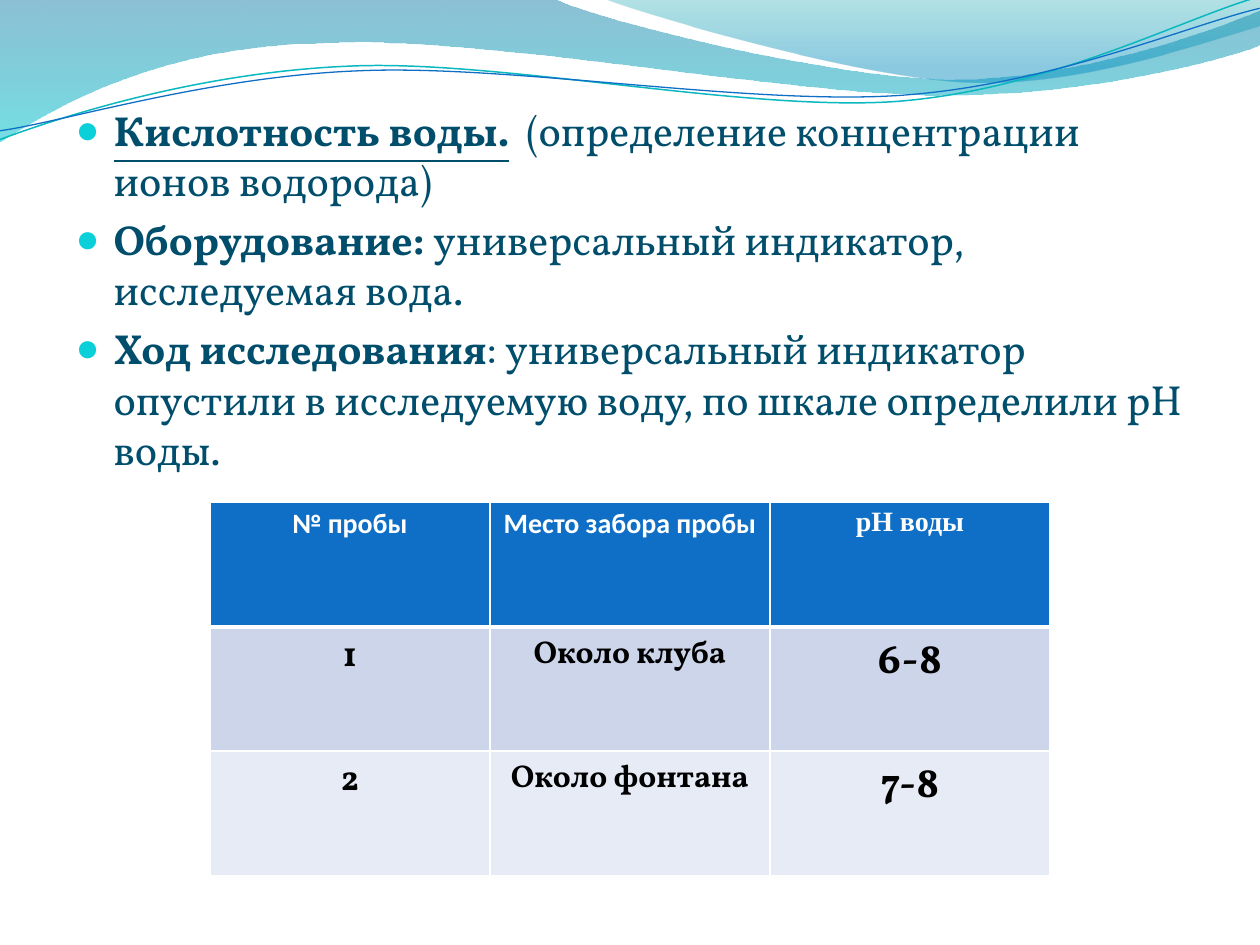
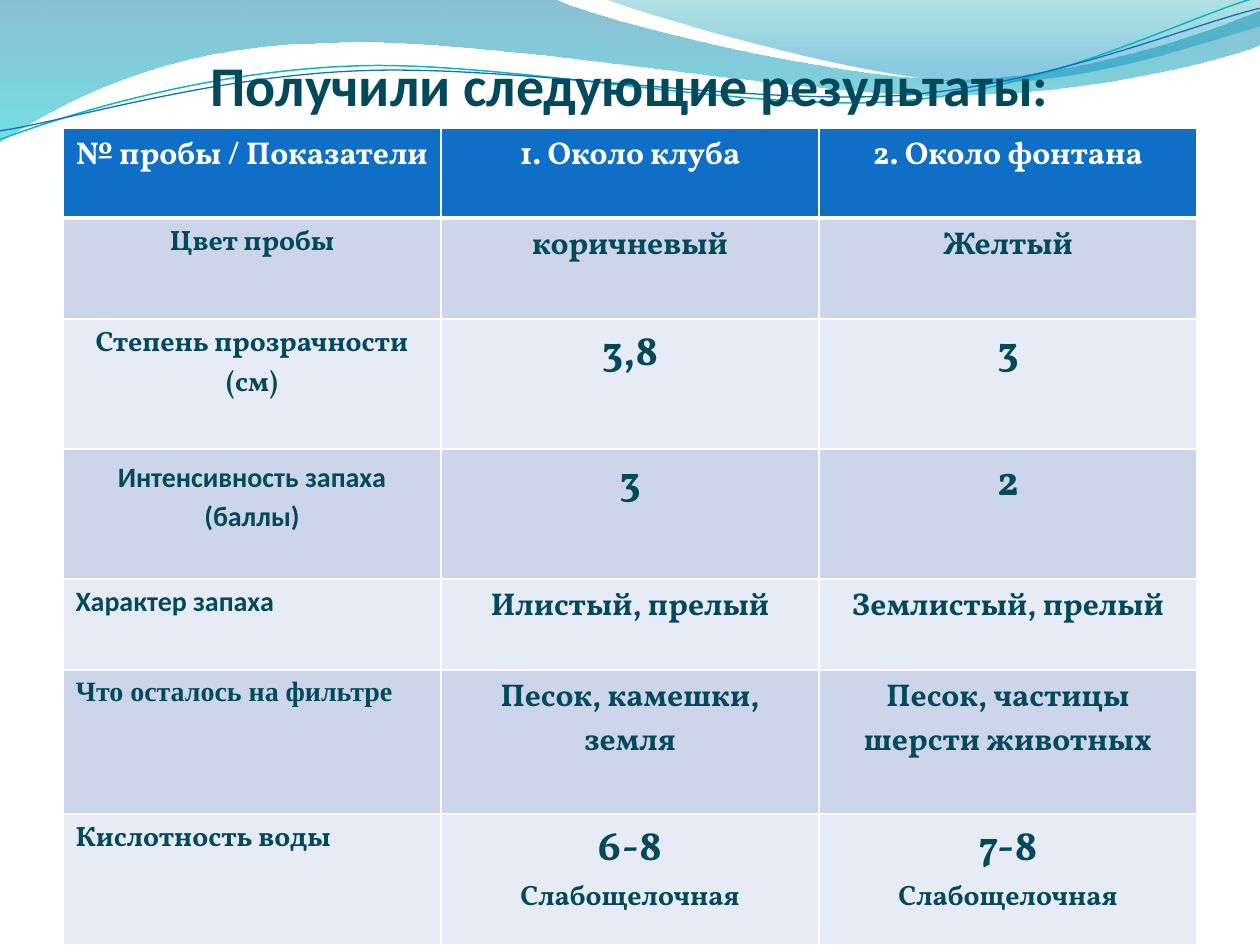
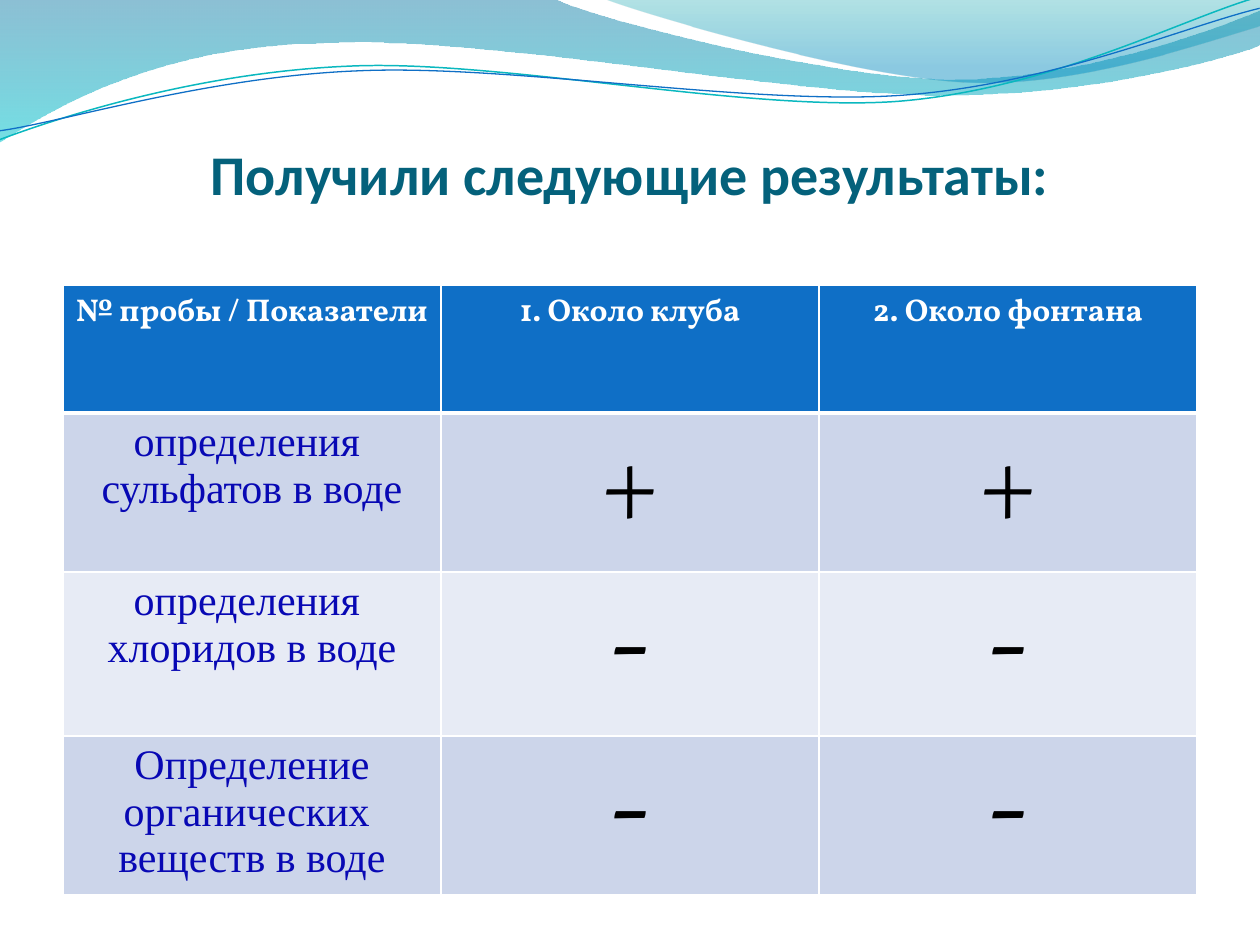
"""Builds three slides on the water tests: acidity method and two result tables."""
from collections import namedtuple
from math import cos, radians, sin

from pptx import Presentation
from pptx.dml.color import RGBColor
from pptx.enum.text import MSO_ANCHOR, MSO_AUTO_SIZE, PP_ALIGN
from pptx.oxml.ns import qn
from pptx.util import Pt
from lxml.etree import SubElement

PX = 914400 / 126
WHITE = RGBColor(0xFF, 0xFF, 0xFF)
BLACK = RGBColor(0x00, 0x00, 0x00)
BLUE = RGBColor(0x0F, 0x6F, 0xC6)
BAND_DARK = RGBColor(0xCC, 0xD5, 0xEA)
BAND_LIGHT = RGBColor(0xE7, 0xEB, 0xF5)
BODY_INK = RGBColor(0x00, 0x4E, 0x6C)
DEEP_TEAL = RGBColor(0x03, 0x49, 0x5C)
TEAL = RGBColor(0x04, 0x61, 0x7B)
NAVY = RGBColor(0x08, 0x08, 0xB4)
WAVE_BLUE = RGBColor(0x00, 0x74, 0xA1)
WAVE_CYAN = RGBColor(0x00, 0xC6, 0xCF)
CREST_GREEN = RGBColor(0x00, 0xA1, 0xA9)
CREST_BLUE = RGBColor(0x00, 0x8B, 0xBF)
STREAM_CYAN = RGBColor(0x0A, 0xB8, 0xBF)
BULLET = RGBColor(0x0B, 0xD0, 0xD9)
HEAD_BORDERS = {"lnL": 1, "lnR": 1, "lnT": 1, "lnB": 3}
STREAM_TURN = 357.3

SERIF, SANS, TIMES = "Vollkorn", "Calibri", "Times New Roman"
CENTER, LEFT = PP_ALIGN.CENTER, PP_ALIGN.LEFT

Style = namedtuple("Style", "size font color bold align spacing",
                   defaults=(True, CENTER, None))
HEAD = Style(18, SERIF, WHITE)
HEAD_SANS = Style(16, SANS, WHITE, spacing=1.15)
HEAD_TIMES = HEAD_SANS._replace(font=TIMES)
SAMPLE = Style(20, SERIF, BLACK)
PLACE = SAMPLE._replace(size=18)
ACIDITY = SAMPLE._replace(size=24)
WORD = Style(18, SERIF, DEEP_TEAL)
VALUE = WORD._replace(size=24)
LABEL = WORD._replace(size=16)
LABEL_SANS = LABEL._replace(font=SANS, spacing=1.15)
LABEL_LEFT = LABEL._replace(align=LEFT)
TEST = Style(24, TIMES, NAVY, False)
SIGN = Style(60, SERIF, BLACK, False)

METHOD = [
    [("Кислотность воды.", True, True),
     ("  (определение концентрации ионов водорода)", False, False)],
    [("Оборудование:", True, False),
     (" универсальный индикатор, исследуемая вода.", False, False)],
    [("Ход исследования", True, False),
     (": универсальный индикатор опустили в исследуемую воду, "
      "по шкале определили рН воды.", False, False)],
]
ACIDITY_ROWS = [
    [[("№ пробы", HEAD_SANS)], [("Место забора пробы", HEAD_SANS)], [("рН воды", HEAD_TIMES)]],
    [[("1", SAMPLE)], [("Около клуба", PLACE)], [("6-8", ACIDITY)]],
    [[("2", SAMPLE)], [("Около фонтана", PLACE)], [("7-8", ACIDITY)]],
]
RESULTS_TITLE = "Получили следующие результаты:"
RESULTS_HEAD = [[("№ пробы / Показатели", HEAD)], [("1. Около клуба", HEAD)],
                [("2. Около фонтана", HEAD)]]
PROPERTY_ROWS = [
    RESULTS_HEAD,
    [[("Цвет пробы", LABEL)], [("коричневый", WORD)], [("Желтый", WORD)]],
    [[("Степень прозрачности", LABEL), ("(см)", LABEL)], [("3,8", VALUE)], [("3", VALUE)]],
    [[("Интенсивность запаха", LABEL_SANS), ("(баллы)", LABEL_SANS)],
     [("3", VALUE)], [("2", VALUE)]],
    [[("Характер запаха", LABEL_LEFT._replace(font=SANS))],
     [("Илистый, прелый", WORD)], [("Землистый, прелый", WORD)]],
    [[("Что осталось на фильтре", LABEL_LEFT._replace(font=TIMES))],
     [("Песок, камешки, земля", WORD)], [("Песок, частицы шерсти животных", WORD)]],
    [[("Кислотность воды", LABEL_LEFT)],
     [("6-8", VALUE), ("Слабощелочная", LABEL)],
     [("7-8", VALUE), ("Слабощелочная", LABEL)]],
]
CHEMISTRY_ROWS = [
    RESULTS_HEAD,
    [[("определения ", TEST), ("сульфатов в воде", TEST)], [("+", SIGN)], [("+", SIGN)]],
    [[("определения ", TEST), ("хлоридов в воде", TEST)], [("-", SIGN)], [("-", SIGN)]],
    [[("Определение органических \nвеществ в воде", TEST)], [("-", SIGN)], [("-", SIGN)]],
]
RESULTS = [
    {"title_box": (63, 49, 1134, 69), "title_color": DEEP_TEAL, "rows": PROPERTY_ROWS,
     "table_at": (63, 128, 1134), "heights": [90, 101, 130, 130, 91, 144, 131]},
    {"title_box": (63, 97, 1134, 110), "title_color": TEAL, "rows": CHEMISTRY_ROWS,
     "table_at": (63, 285, 1134), "heights": [128, 159, 164, 159]},
]

WAVES = [
    {"start": (0, 0), "stops": [(0, WAVE_BLUE, 45), (1, WAVE_CYAN, 55)],
     "steps": [[(554, -1)], [(600, 21), (837, 79), (955, 79)],
               [(1075, 79), (1207, 33), (1260, 11)], [(1261, 45)],
               [(1239, 55), (1096, 96), (940, 95)], [(784, 95), (481, 35), (324, 43)],
               [(163, 45), (58, 105), (-1, 142)], [(0, 0)]]},
    {"start": (604, -1), "stops": [(0, CREST_GREEN, 30), (0.8, CREST_BLUE, 45)],
     "steps": [[(641, 14), (859, 78), (969, 82)], [(1079, 87), (1211, 40), (1260, 26)],
               [(1260, 0)], [(604, -1)]]},
    {"start": (0, 140), "line": (STREAM_CYAN, 0.85), "center": (629, 72),
     "steps": [[(60, 117), (199, 72), (349, 66)], [(498, 59), (747, 112), (898, 101)],
               [(1050, 89), (1182, 19), (1257, -3)]]},
    {"start": (0, 131), "line": (BLUE, 0.75), "center": (629, 74),
     "steps": [[(59, 123), (207, 77), (357, 71)], [(508, 64), (752, 106), (903, 95)],
               [(1053, 84), (1186, 26), (1260, 8)]]},
]


def px(length):
    return round(length * PX)


def place(shape, box):
    for side, length in zip(("left", "top", "width", "height"), box):
        setattr(shape, side, px(length))


def style_run(run, size, font, color, **flags):
    for name, value in {"size": Pt(size), "name": font, **flags}.items():
        setattr(run.font, name, value)
    run.font.color.rgb = color


def level(point, center):
    angle = radians(360 - STREAM_TURN)
    x, y = point[0] - center[0], point[1] - center[1]
    return (round(center[0] + x * cos(angle) - y * sin(angle)),
            round(center[1] + x * sin(angle) + y * cos(angle)))


def draw_curve(slide, start, steps, closed):
    anchors = [start] + [step[-1] for step in steps]
    left, top = (min(axis) for axis in zip(*anchors))
    outline = slide.shapes.build_freeform(*start, scale=PX)
    outline.add_line_segments(anchors[1:], close=closed)
    shape = outline.convert_to_shape()
    segments = list(shape._element.spPr.iter(qn("a:lnTo")))
    for segment, step in zip(segments, steps):
        if len(step) == 3:
            segment.clear()
            segment.tag = qn("a:cubicBezTo")
            for x, y in step:
                SubElement(segment, qn("a:pt"), x=str(x - left), y=str(y - top))
    return shape


def add_waves(slide, master):
    for order, wave in enumerate(WAVES):
        start, steps, filled = wave["start"], wave["steps"], "stops" in wave
        if not filled:
            start = level(start, wave["center"])
            steps = [[level(point, wave["center"]) for point in step] for step in steps]
        shape = draw_curve(slide, start, steps, filled)
        shape.shadow.inherit = False
        if filled:
            shape.line.fill.background()
            shape.fill.gradient()
            shape.fill.gradient_angle = 270
            for stop, (position, color, _) in zip(shape.fill.gradient_stops, wave["stops"]):
                stop.position, stop.color.rgb = position, color
            inks = shape._element.spPr.iter(qn("a:srgbClr"))
            for ink, (_, _, opacity) in zip(inks, wave["stops"]):
                SubElement(ink, qn("a:alpha"), val=str(opacity * 1000))
        else:
            shape.rotation = STREAM_TURN
            shape.fill.background()
            shape.line.color.rgb, width = wave["line"]
            shape.line.width = Pt(width)
        shape._element.nvSpPr.cNvPr.id = 20 + order
        master.shapes._spTree.insert(2 + order, shape._element)


def add_title(slide, text, box, color):
    title = slide.shapes.title
    place(title, box)
    frame = title.text_frame
    for name, value in {"margin_left": 0, "margin_top": px(6), "margin_right": 0,
                        "margin_bottom": 0, "vertical_anchor": MSO_ANCHOR.BOTTOM,
                        "auto_size": MSO_AUTO_SIZE.NONE, "word_wrap": True}.items():
        setattr(frame, name, value)
    frame.text = text
    frame.paragraphs[0].alignment = CENTER
    style_run(frame.paragraphs[0].runs[0], 32, SANS, color, bold=True)


def add_method(slide, box):
    body = slide.placeholders[1]
    place(body, box)
    frame = body.text_frame
    frame.auto_size = MSO_AUTO_SIZE.NONE
    for order, item in enumerate(METHOD):
        paragraph = frame.add_paragraph() if order else frame.paragraphs[0]
        paragraph.space_before = Pt(4.8)
        props = paragraph._p.get_or_add_pPr()
        props.set("marL", str(px(38)))
        props.set("indent", str(px(-38)))
        SubElement(SubElement(props, qn("a:buClr")), qn("a:srgbClr"), val=str(BULLET))
        SubElement(props, qn("a:buSzPct"), val="95000")
        SubElement(props, qn("a:buFont"), typeface="Arial")
        SubElement(props, qn("a:buChar"), char="●")
        for text, bold, underline in item:
            run = paragraph.add_run()
            run.text = text
            style_run(run, 24, SERIF, BODY_INK, bold=bold, underline=underline)


def add_borders(cell, borders):
    props = cell._tc.get_or_add_tcPr()
    for order, (side, width) in enumerate(borders.items()):
        edge = SubElement(props, qn(f"a:{side}"), w=str(Pt(width)))
        SubElement(SubElement(edge, qn("a:solidFill")), qn("a:srgbClr"), val=str(WHITE))
        props.insert(order, edge)


def fill_cell(cell, lines, color):
    cell.fill.solid()
    cell.fill.fore_color.rgb = color
    for order, (text, style) in enumerate(lines):
        frame = cell.text_frame
        paragraph = frame.add_paragraph() if order else frame.paragraphs[0]
        paragraph.text = text
        paragraph.alignment = style.align
        if style.spacing:
            paragraph.line_spacing = style.spacing
        for run in paragraph.runs:
            style_run(run, style.size, style.font, style.color, bold=style.bold)


def add_grid(slide, rows, table_at, heights):
    left, top, width = table_at
    columns = len(rows[0])
    table = slide.shapes.add_table(len(rows), columns, px(left), px(top),
                                   px(width), px(sum(heights))).table
    for column in table.columns:
        column.width = px(width / columns)
    for r, (row, height) in enumerate(zip(rows, heights)):
        table.rows[r].height = px(height)
        color = (BAND_DARK if r % 2 else BAND_LIGHT) if r else BLUE
        for c, lines in enumerate(row):
            fill_cell(table.cell(r, c), lines, color)
    for cell in table.rows[0].cells:
        add_borders(cell, HEAD_BORDERS)
    return table


def main():
    deck = Presentation()
    deck.slide_width, deck.slide_height = px(1260), px(945)

    acidity = deck.slides.add_slide(deck.slide_layouts[1])
    add_waves(acidity, deck.slide_master)
    empty_title = acidity.shapes.title._element
    empty_title.getparent().remove(empty_title)
    add_method(acidity, (63, 98, 1134, 774))
    table = add_grid(acidity, ACIDITY_ROWS, (210, 502, 840), [125, 124, 125])
    for cell in table.rows[0].cells:
        for side, margin in {"left": 9, "top": 0, "right": 9, "bottom": 0}.items():
            setattr(cell, f"margin_{side}", px(margin))

    for result in RESULTS:
        slide = deck.slides.add_slide(deck.slide_layouts[5])
        add_title(slide, RESULTS_TITLE, result["title_box"], result["title_color"])
        add_grid(slide, result["rows"], result["table_at"], result["heights"])

    deck.save("out.pptx")


if __name__ == "__main__":
    main()
